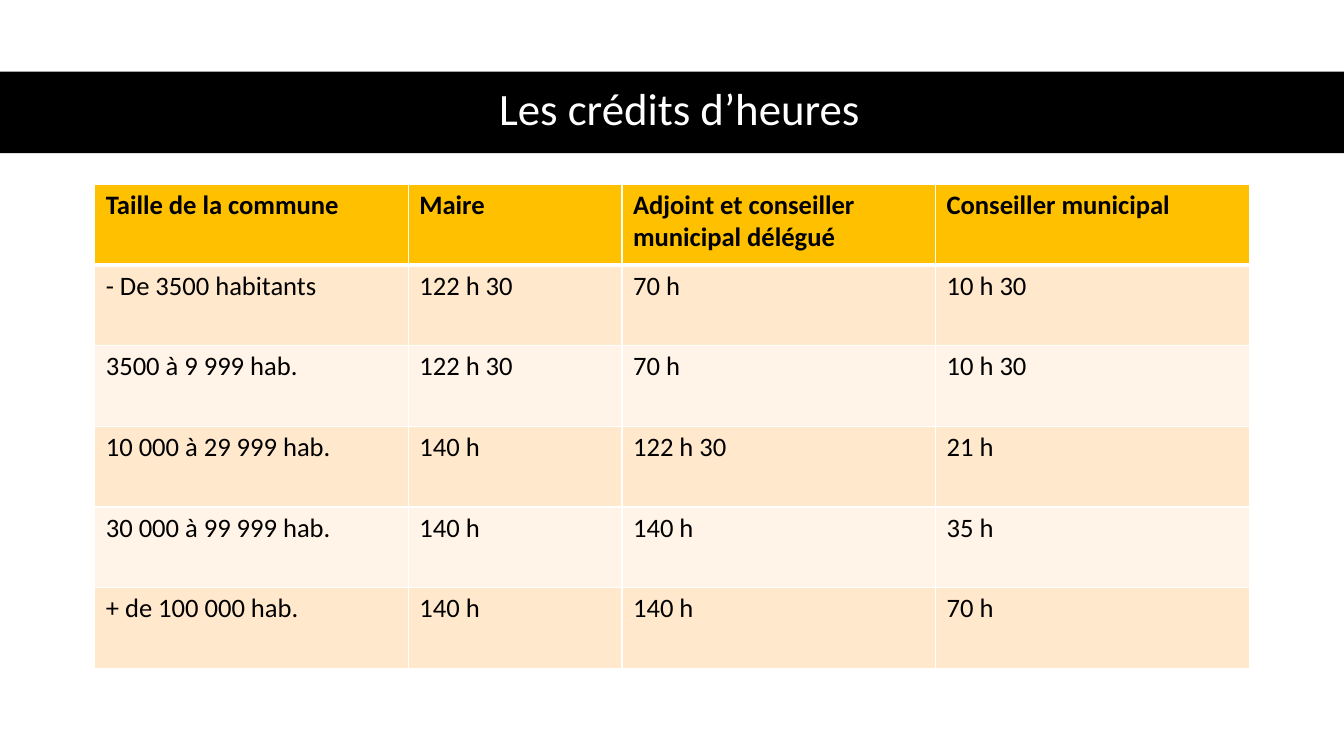
from lxml import etree
from pptx import Presentation
from pptx.dml.color import RGBColor
from pptx.enum.shapes import MSO_SHAPE
from pptx.enum.text import MSO_ANCHOR, PP_ALIGN
from pptx.oxml.ns import qn
from pptx.util import Inches, Pt

RECT = MSO_SHAPE.RECTANGLE
MIDDLE, TOP = MSO_ANCHOR.MIDDLE, MSO_ANCHOR.TOP
CENTER, LEFT = PP_ALIGN.CENTER, PP_ALIGN.LEFT
BLACK = RGBColor(0x00, 0x00, 0x00)
WHITE = RGBColor(0xFF, 0xFF, 0xFF)
GOLD = RGBColor(0xFF, 0xC0, 0x00)
PEACH = RGBColor(0xFF, 0xE8, 0xCC)
CREAM = RGBColor(0xFF, 0xF4, 0xE7)

WIDTHS = (3.11, 2.12, 3.11, 3.11)
ROWS = (
    ("Taille de la commune", "Maire", "Adjoint et conseiller municipal délégué",
     "Conseiller municipal"),
    ("- De 3500 habitants", "122 h 30", "70 h", "10 h 30"),
    ("3500 à 9 999 hab.", "122 h 30", "70 h", "10 h 30"),
    ("10 000 à 29 999 hab.", "140 h", "122 h 30", "21 h"),
    ("30 000 à 99 999 hab.", "140 h", "140 h", "35 h"),
    ("+ de 100 000 hab.", "140 h", "140 h", "70 h"),
)


def write(frame, text, size=19, color=BLACK, bold=False, align=LEFT, anchor=TOP,
          space=1.0, font="Calibri"):
    frame.word_wrap = True
    frame.vertical_anchor = anchor
    para = frame.paragraphs[0]
    para.alignment = align
    para.line_spacing = space
    run = para.add_run()
    run.text = text
    run.font.name = font
    run.font.size = Pt(size)
    run.font.bold = bold
    run.font.color.rgb = color


def edge(cell, side, width, color=WHITE):
    line = etree.SubElement(cell._tc.get_or_add_tcPr(), qn("a:ln" + side),
                            w=str(Pt(width)))
    fill = etree.SubElement(line, qn("a:solidFill"))
    etree.SubElement(fill, qn("a:srgbClr"), val=str(color))


class Deck:
    """Holds the page style and the current slide."""

    def __init__(self):
        self.show = Presentation()
        self.show.slide_width = Inches(13.33)
        self.show.slide_height = Inches(7.5)
        self.slide = self.show.slides.add_slide(self.show.slide_layouts[5])

    def band(self, left, top, width, height, color):
        shape = self.slide.shapes.add_shape(
            RECT, Inches(left), Inches(top), Inches(width), Inches(height))
        shape.shadow.inherit = False
        shape.fill.solid()
        shape.fill.fore_color.rgb = color
        shape.line.fill.background()
        self.slide.shapes._spTree.insert(2, shape._element)

    def title(self, text, left, top, width, height):
        shape = self.slide.shapes.title
        shape.left, shape.top = Inches(left), Inches(top)
        shape.width, shape.height = Inches(width), Inches(height)
        write(shape.text_frame, text, size=32, color=WHITE, align=CENTER,
              anchor=MIDDLE, space=0.9)

    def table(self, rows, widths, left, top, step):
        grid = self.slide.shapes.add_table(
            len(rows), len(widths), Inches(left), Inches(top),
            Inches(sum(widths)), Inches(step * len(rows))).table
        for col, width in zip(grid.columns, widths):
            col.width = Inches(width)
        for r, row in enumerate(rows):
            for c, text in enumerate(row):
                self.cell(grid.cell(r, c), text, r)

    def cell(self, cell, text, row):
        head = row == 0
        cell.margin_left = cell.margin_right = Inches(0.11)
        cell.margin_top = cell.margin_bottom = Inches(0.05)
        write(cell.text_frame, text, bold=head)
        for side in "LRTB":
            thick = (row, side) in ((0, "B"), (1, "T"))
            edge(cell, side, 3 if thick else 1)
        cell.fill.solid()
        cell.fill.fore_color.rgb = GOLD if head else (CREAM, PEACH)[row % 2]


def main():
    deck = Deck()
    deck.band(0, 0.71, 13.33, 0.81, BLACK)
    deck.title("Les crédits d’heures", 0.61, 0.7, 12.26, 0.81)
    deck.table(ROWS, WIDTHS, 0.94, 1.83, 0.8)
    deck.show.save("out.pptx")


if __name__ == "__main__":
    main()
